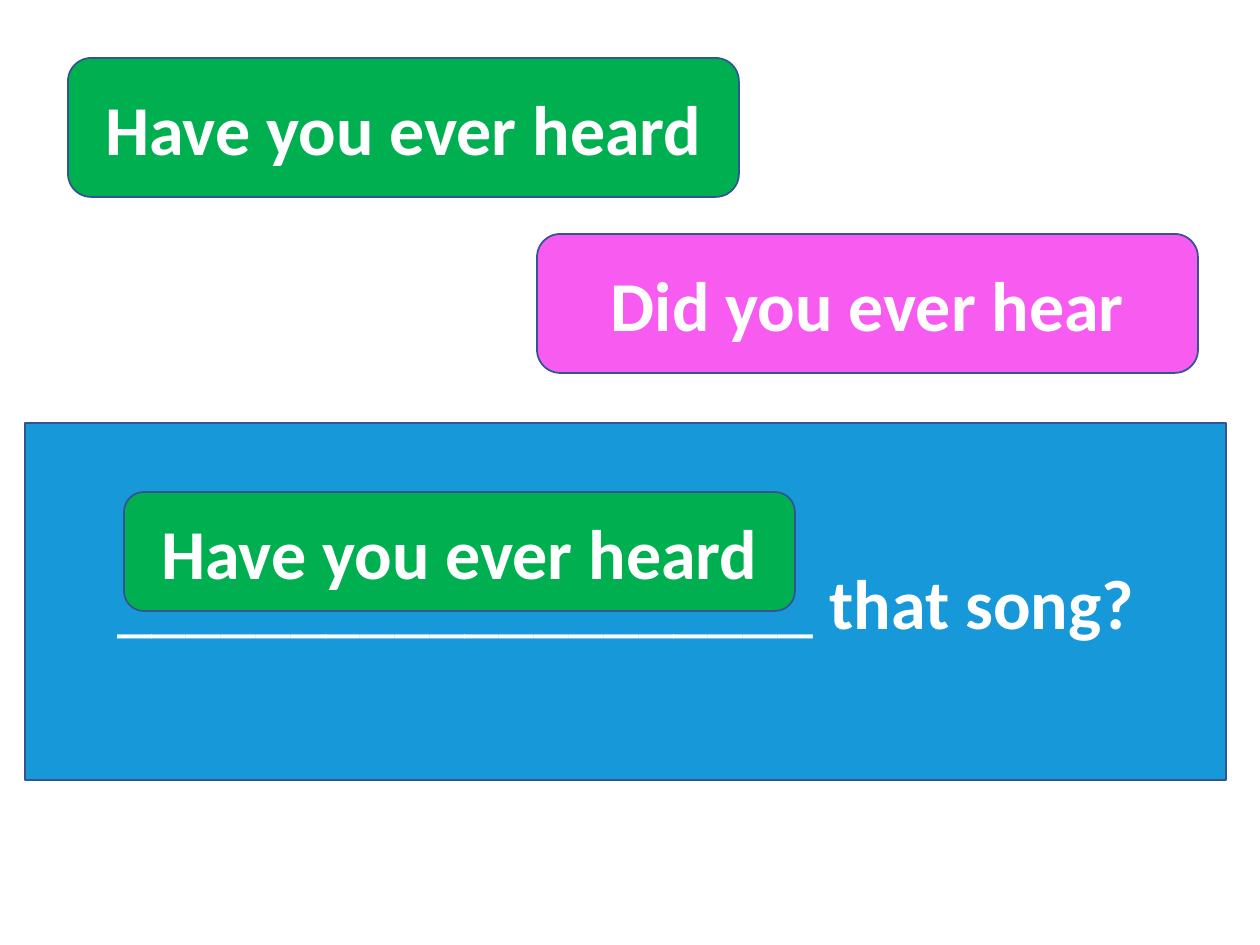
from pptx import Presentation
from pptx.dml.color import RGBColor
from pptx.enum.shapes import MSO_SHAPE as Preset
from pptx.enum.text import MSO_ANCHOR as Anchor, PP_ALIGN as Align
from pptx.util import Emu, Pt

PX = 914400 // 126  # slide drawn at 126 px to the inch
COLORS = {
    "green": "00B050",
    "pink": "F75BF0",
    "blue": "1798D9",
    "outline": "325491",
    "white": "FFFFFF",
}


def px(length):
    return Emu(length * PX)


def color(name):
    return RGBColor.from_string(COLORS[name])


def add_text(paragraph, text, size=40, bold=True, font="Calibri", fill="white"):
    run = paragraph.add_run()
    run.text = text
    run.font.name = font
    run.font.size = Pt(size)
    run.font.bold = bold
    run.font.color.rgb = color(fill)


def add_box(slide, preset, box, fill):
    """Add a filled, outlined shape and return its centred paragraph."""
    shape = slide.shapes.add_shape(preset, *map(px, box))
    shape.shadow.inherit = False
    shape.fill.solid()
    shape.fill.fore_color.rgb = color(fill)
    shape.line.color.rgb = color("outline")
    shape.line.width = Pt(1)
    frame = shape.text_frame
    frame.word_wrap = True
    frame.vertical_anchor = Anchor.MIDDLE
    paragraph = frame.paragraphs[0]
    paragraph.alignment = Align.CENTER
    return paragraph


def add_choice(slide, box, text, fill):
    add_text(add_box(slide, Preset.ROUNDED_RECTANGLE, box, fill), text)


def add_sentence(slide, box, answer, ending):
    """Add the gap sentence with the chosen answer lying over its blank."""
    left, top, _, _ = box
    paragraph = add_box(slide, Preset.RECTANGLE, box, "blue")
    add_text(paragraph, "_" * 20 + " ", bold=False)
    add_text(paragraph, ending)
    add_choice(slide, (left + 99, top + 69, 671, 119), answer, "green")


def main():
    presentation = Presentation()
    presentation.slide_width = px(1260)
    presentation.slide_height = px(945)
    slide = presentation.slides.add_slide(presentation.slide_layouts[6])

    # Two choices
    answer = "Have you ever heard"
    add_choice(slide, (68, 58, 671, 139), answer, "green")
    add_choice(slide, (537, 234, 661, 139), "Did you ever hear", "pink")

    # Sentence to complete
    add_sentence(slide, (25, 423, 1201, 357), answer, "that song?")

    presentation.save("out.pptx")


if __name__ == "__main__":
    main()
